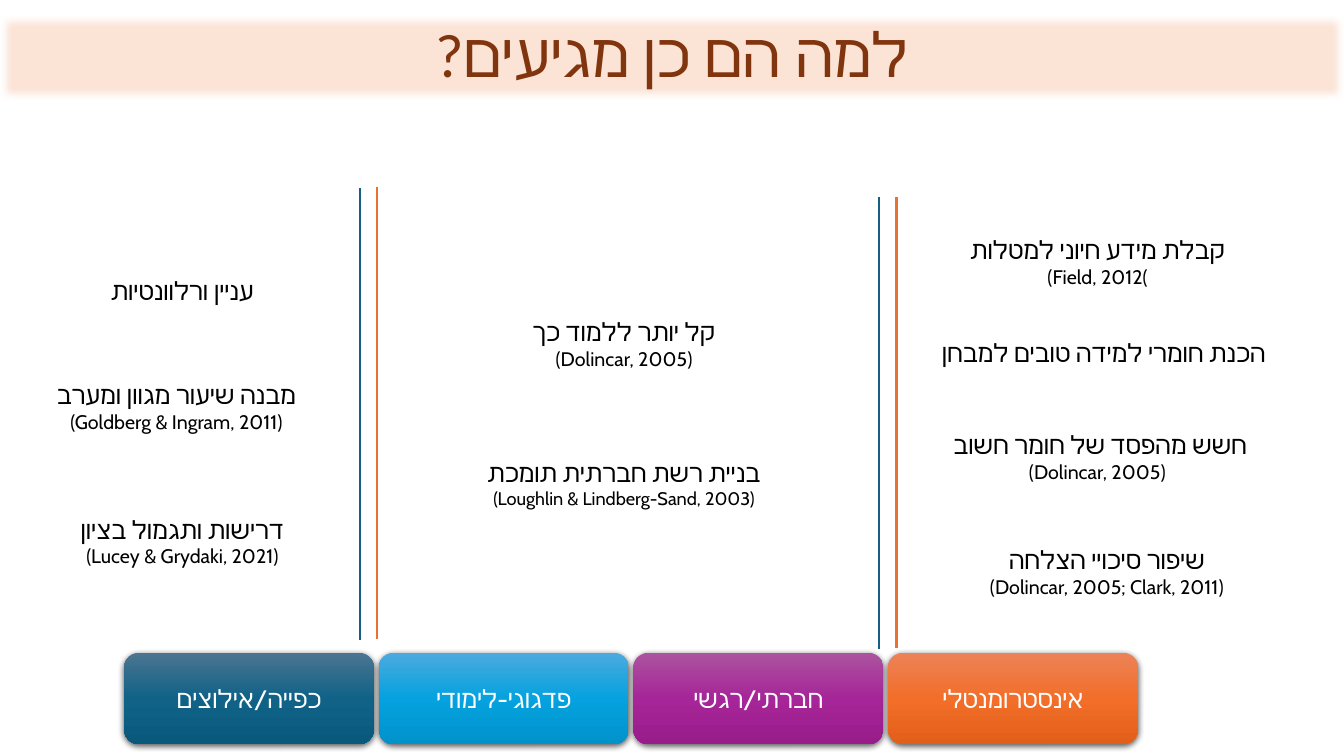
"""Build a slide on the reasons why students do come to class."""
from dataclasses import dataclass

from pptx import Presentation
from pptx.dml.color import RGBColor
from pptx.enum.shapes import MSO_CONNECTOR, MSO_SHAPE
from pptx.enum.text import MSO_ANCHOR, MSO_AUTO_SIZE, PP_ALIGN
from pptx.oxml import parse_xml
from pptx.oxml.ns import nsdecls
from pptx.shapes.autoshape import Shape
from pptx.slide import Slide
from pptx.util import Emu, Inches, Pt

COLORS = {
    "banner": "FBE3D6", "title": "80350E", "text": "000000", "label": "FFFFFF",
    "orange": "E97132", "blue": "156082",
}
FONT = "Cabin"
TITLE_FONT = "Calibri"
WIDTH, HEIGHT = Inches(13.33), Inches(7.5)
REASON_HEIGHT = 20.93
DIVIDER_HEIGHT = 59.75
DIVIDER_GAP = 1.25
CATEGORY_LEFT, CATEGORY_STEP, CATEGORY_TOP = 9.23, 18.95, 86.33
CATEGORY_WIDTH, CATEGORY_HEIGHT = 18.6, 12.13
SHADOW = (
    '<a:outerShdw blurRad="57150" dist="19050" dir="5400000" algn="ctr" rotWithShape="0">'
    '<a:srgbClr val="000000"><a:alpha val="63000"/></a:srgbClr></a:outerShdw>'
)
SOFT_EDGE = '<a:softEdge rad="63500"/>'


@dataclass(frozen=True)
class Reason:
    """A reason placed in hundredths of the slide; sizes are one per run."""
    left: float
    top: float
    text: str
    sizes: tuple[float, ...] = (18, 14)
    width: float = 31.65
    rtl: bool = False


@dataclass(frozen=True)
class Category:
    """A category button with its gradient from top to bottom."""
    label: str
    gradient: tuple[str, str, str]


REASONS = (
    Reason(-2.25, 28, "עניין ורלוונטיות"),
    Reason(64.28, 49.87, "חשש מהפסד של חומר חשוב \v(Dolincar, 2005)", width=34.73, rtl=True),
    Reason(65.85, 24.13, "קבלת מידע חיוני למטלות\v(Field, 2012("),
    Reason(27.98, 34.93, "קל יותר ללמוד כך\v(Dolincar, 2005)", width=36.9, rtl=True),
    Reason(66.53, 65.07, "שיפור סיכויי הצלחה\v(Dolincar, 2005; Clark, 2011)"),
    Reason(30.6, 53.47, "בניית רשת חברתית תומכת\n(Loughlin & Lindberg-Sand, 2003)", (18, 13)),
    Reason(63.9, 36.13, "הכנת חומרי למידה טובים למבחן ", width=36.9),
    Reason(-2.25, 61.07, "דרישות ותגמול בציון\n(Lucey & Grydaki, 2021)"),
    Reason(-2.7, 43.33, "מבנה שיעור מגוון ומערב\n(Goldberg & Ingram, 2011)"),
)
DIVIDERS = ((28.05, 24.8), (66.68, 26))
CATEGORIES = (
    Category("כפייה/אילוצים", ("4C7591", "106287", "09597D")),
    Category("פדגוגי-לימודי", ("4CAADF", "05A2DF", "0092CB")),
    Category("חברתי/רגשי", ("AC53A0", "A62598", "991C8B")),
    Category("אינסטרומנטלי", ("ED8257", "F26E29", "E25F1A")),
)


def across(share: float) -> Emu:
    """Turn hundredths of the slide width into a length."""
    return Emu(round(WIDTH * share / 100))


def down(share: float) -> Emu:
    """Turn hundredths of the slide height into a length."""
    return Emu(round(HEIGHT * share / 100))


def add_effect(shape_properties, effect: str = "") -> None:
    """Append an effect list, empty by default."""
    shape_properties.append(parse_xml(f'<a:effectLst {nsdecls("a")}>{effect}</a:effectLst>'))


def write(shape: Shape, text: str, sizes: tuple[float, ...], color: str,
          font: str = FONT, rtl: bool = False) -> None:
    """Set centred text and format its runs in order."""
    frame = shape.text_frame
    frame.text = text
    frame.word_wrap = True
    frame.auto_size = MSO_AUTO_SIZE.NONE
    frame.vertical_anchor = MSO_ANCHOR.MIDDLE
    for paragraph in frame.paragraphs:
        paragraph.alignment = PP_ALIGN.CENTER
        if rtl:
            paragraph._p.get_or_add_pPr().set("rtl", "1")
    runs = [run for paragraph in frame.paragraphs for run in paragraph.runs]
    for run, size in zip(runs, sizes):
        run.font.size = Pt(size)
        run.font.name = font
        run.font.color.rgb = RGBColor.from_string(COLORS[color])
        run._r.get_or_add_rPr().append(parse_xml(f'<a:cs {nsdecls("a")} typeface="{font}"/>'))


def add_title(slide: Slide) -> None:
    """Format the title as a soft-edged banner."""
    title = slide.shapes.title
    title.left, title.top, title.width, title.height = 0, down(2), WIDTH, down(11.2)
    title.fill.solid()
    title.fill.fore_color.rgb = RGBColor.from_string(COLORS["banner"])
    add_effect(title._element.spPr, SOFT_EDGE)
    write(title, "למה הם כן מגיעים?", (44,), "title", TITLE_FONT, rtl=True)
    title.text_frame.paragraphs[0].line_spacing = 0.9


def add_reason(slide: Slide, reason: Reason) -> None:
    """Draw a reason in an invisible ellipse."""
    ellipse = slide.shapes.add_shape(
        MSO_SHAPE.OVAL, across(reason.left), down(reason.top),
        across(reason.width), down(REASON_HEIGHT))
    ellipse.fill.background()
    ellipse.line.fill.background()
    ellipse.shadow.inherit = False
    write(ellipse, reason.text, reason.sizes, "text", rtl=reason.rtl)


def add_divider(slide: Slide, left: float, top: float, color: str, weight: float) -> None:
    """Draw one vertical line between groups of reasons."""
    divider = slide.shapes.add_connector(
        MSO_CONNECTOR.STRAIGHT, across(left), down(top), across(left), down(top + DIVIDER_HEIGHT))
    divider.line.color.rgb = RGBColor.from_string(COLORS[color])
    divider.line.width = Pt(weight)
    add_effect(divider._element.spPr)


def add_category(slide: Slide, column: int, category: Category) -> None:
    """Draw a category button in its column."""
    button = slide.shapes.add_shape(
        MSO_SHAPE.ROUNDED_RECTANGLE, across(CATEGORY_LEFT + column * CATEGORY_STEP),
        down(CATEGORY_TOP), across(CATEGORY_WIDTH), down(CATEGORY_HEIGHT))
    button.line.fill.background()
    stops = "".join(
        f'<a:gs pos="{index * 50000}"><a:srgbClr val="{color}"/></a:gs>'
        for index, color in enumerate(category.gradient))
    properties = button._element.spPr
    properties.insert(2, parse_xml(
        f'<a:gradFill {nsdecls("a")} rotWithShape="1"><a:gsLst>{stops}</a:gsLst>'
        '<a:lin ang="5400000" scaled="0"/></a:gradFill>'))
    add_effect(properties, SHADOW)
    write(button, category.label, (18,), "label")


def main() -> None:
    """Create and save the presentation."""
    presentation = Presentation()
    presentation.slide_width, presentation.slide_height = WIDTH, HEIGHT
    slide = presentation.slides.add_slide(presentation.slide_layouts[5])
    add_title(slide)
    for reason in REASONS:
        add_reason(slide, reason)
    for left, top in DIVIDERS:
        add_divider(slide, left, top, "orange", 2)
        add_divider(slide, left - DIVIDER_GAP, top + 0.1, "blue", 1.5)
    for column, category in enumerate(CATEGORIES):
        add_category(slide, column, category)
    presentation.save("out.pptx")


if __name__ == "__main__":
    main()
